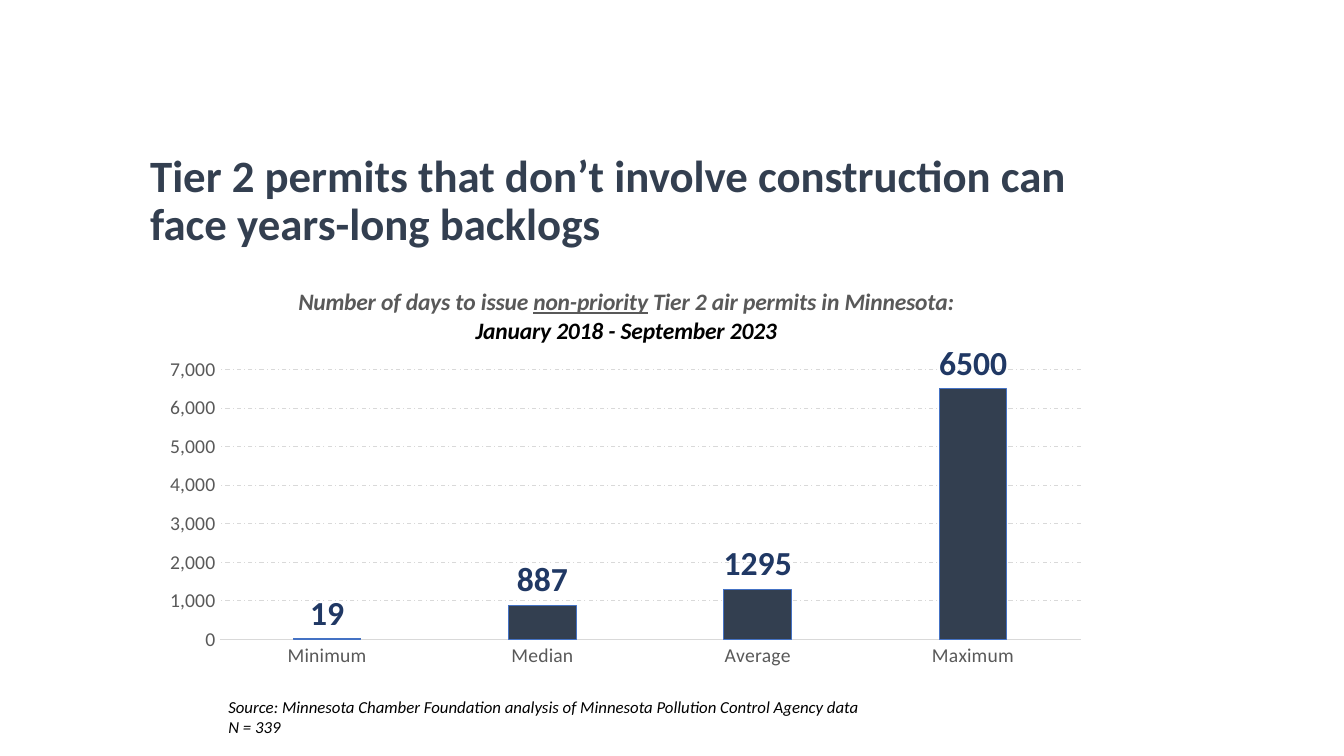
"""Build the slide on backlogs for Tier 2 air permits."""
from dataclasses import dataclass

import lxml.etree
import pptx
import pptx.chart.data
import pptx.dml.color
import pptx.enum.chart
import pptx.enum.dml
import pptx.enum.text
import pptx.oxml.ns
import pptx.util

Pt = pptx.util.Pt
FONT = "Calibri"
COLORS = {
    "slate": "333F50",
    "navy": "203864",
    "blue": "4472C4",
    "gray": "595959",
    "rule": "D9D9D9",
    "black": "000000",
}


@dataclass(frozen=True)
class Style:
    """Describe how text looks."""

    size: float
    color: str
    bold: bool = False
    italic: bool = False
    underline: bool = False


@dataclass(frozen=True)
class Span:
    """Pair a piece of text with its style."""

    text: str
    style: Style


HEADLINE = Style(32, "slate", bold=True)
SOURCE = Style(12, "black", italic=True)
AXIS = Style(14, "gray")
LABEL = Style(24, "navy", bold=True)
CAPTION = Style(16.8, "gray", bold=True, italic=True)
STRESSED = Style(16.8, "gray", bold=True, italic=True, underline=True)
PERIOD = Style(16.8, "black", bold=True, italic=True)

CHART_TITLE = [
    [
        Span("Number of days to issue ", CAPTION),
        Span("non-priority", STRESSED),
        Span(" Tier 2 air permits in Minnesota:", CAPTION),
    ],
    [Span("January 2018 - September 2023", PERIOD)],
]
DAYS = {"Minimum": 19, "Median": 887, "Average": 1295, "Maximum": 6500}


def rgb(name: str) -> pptx.dml.color.RGBColor:
    """Return a named colour."""
    return pptx.dml.color.RGBColor.from_string(COLORS[name])


def format_font(font, style: Style) -> None:
    """Apply a style to a font."""
    font.name = FONT
    font.size = Pt(style.size)
    font.bold = style.bold
    font.italic = style.italic
    font.underline = style.underline
    font.color.rgb = rgb(style.color)


def format_line(line, color: str) -> None:
    """Give a line its colour and the common width."""
    line.color.rgb = rgb(color)
    line.width = Pt(0.75)


def place(parent, index: int, **fractions: float) -> None:
    """Set the manual layout of a chart part."""
    qn = pptx.oxml.ns.qn
    for old in parent.findall(qn("c:layout")):
        parent.remove(old)
    layout = lxml.etree.Element(qn("c:layout"))
    manual = lxml.etree.SubElement(layout, qn("c:manualLayout"))
    settings = {"xMode": "edge", "yMode": "edge", **fractions}
    if "w" in fractions:
        settings = {"layoutTarget": "inner", **settings}
    for tag, value in settings.items():
        lxml.etree.SubElement(manual, qn(f"c:{tag}")).set("val", str(value))
    parent.insert(index, layout)


def add_headline(s) -> None:
    """Fill and place the title placeholder."""
    sp = s.shapes.title
    sp.left, sp.top, sp.width, sp.height = Pt(100), Pt(92), Pt(685.5), Pt(104.5)
    tf = sp.text_frame
    tf.text = "Tier 2 permits that don’t involve construction can face years-long backlogs"
    tf.word_wrap = True
    tf.vertical_anchor = pptx.enum.text.MSO_ANCHOR.MIDDLE
    p = tf.paragraphs[0]
    p.alignment = pptx.enum.text.PP_ALIGN.LEFT
    p.line_spacing = 0.9
    format_font(p.runs[0].font, HEADLINE)


def add_source(s) -> None:
    """Add the source note."""
    tf = s.shapes.add_textbox(Pt(156), Pt(494), Pt(503), Pt(36)).text_frame
    tf.word_wrap = True
    tf.text = (
        "Source: Minnesota Chamber Foundation analysis of "
        "Minnesota Pollution Control Agency data\nN = 339"
    )
    for p in tf.paragraphs:
        format_font(p.runs[0].font, SOURCE)


def add_chart_title(chart) -> None:
    """Write the two-line chart title."""
    tf = chart.chart_title.text_frame
    for i, spans in enumerate(CHART_TITLE):
        p = tf.add_paragraph() if i else tf.paragraphs[0]
        p.alignment = pptx.enum.text.PP_ALIGN.CENTER
        for span in spans:
            r = p.add_run()
            r.text = span.text
            format_font(r.font, span.style)
    chart.chart_title.include_in_layout = False
    place(chart.chart_title._element, 1, x=0.15, y=0.04)


def add_days_chart(s) -> None:
    """Add the column chart of days to issue a permit."""
    xl = pptx.enum.chart
    data = pptx.chart.data.CategoryChartData()
    data.categories = list(DAYS)
    data.add_series("Series 1", list(DAYS.values()))
    chart = s.shapes.add_chart(
        xl.XL_CHART_TYPE.COLUMN_CLUSTERED,
        Pt(109.5), Pt(191), Pt(676), Pt(292), data,
    ).chart
    format_font(chart.font, Style(14, "black"))
    chart.has_legend = False
    add_chart_title(chart)

    plot = chart.plots[0]
    plot.vary_by_categories = False
    plot.gap_width, plot.overlap = 219, -27
    series = plot.series[0]
    series.format.fill.solid()
    series.format.fill.fore_color.rgb = rgb("slate")
    format_line(series.format.line, "blue")
    labels = series.data_labels
    labels.show_value = True
    labels.position = xl.XL_LABEL_POSITION.OUTSIDE_END
    format_font(labels.font, LABEL)

    for axis in (chart.category_axis, chart.value_axis):
        axis.major_tick_mark = axis.minor_tick_mark = xl.XL_TICK_MARK.NONE
        format_font(axis.tick_labels.font, AXIS)
    format_line(chart.category_axis.format.line, "rule")
    values = chart.value_axis
    values.minimum_scale, values.maximum_scale, values.major_unit = 0, 7000, 1000
    values.tick_labels.number_format = "#,##0"
    values.tick_labels.number_format_is_linked = False
    values.format.line.fill.background()
    grid = values.major_gridlines.format.line
    format_line(grid, "rule")
    grid.dash_style = pptx.enum.dml.MSO_LINE.DASH_DOT
    plot_area = chart._chartSpace.find(".//" + pptx.oxml.ns.qn("c:plotArea"))
    place(plot_area, 0, x=0.07, y=0.25, w=0.91, h=0.66)


def main() -> None:
    """Build and save the presentation."""
    prs = pptx.Presentation()
    prs.slide_width, prs.slide_height = Pt(960), Pt(540)
    s = prs.slides.add_slide(prs.slide_layouts[5])
    add_headline(s)
    add_source(s)
    add_days_chart(s)
    prs.save("out.pptx")


if __name__ == "__main__":
    main()
